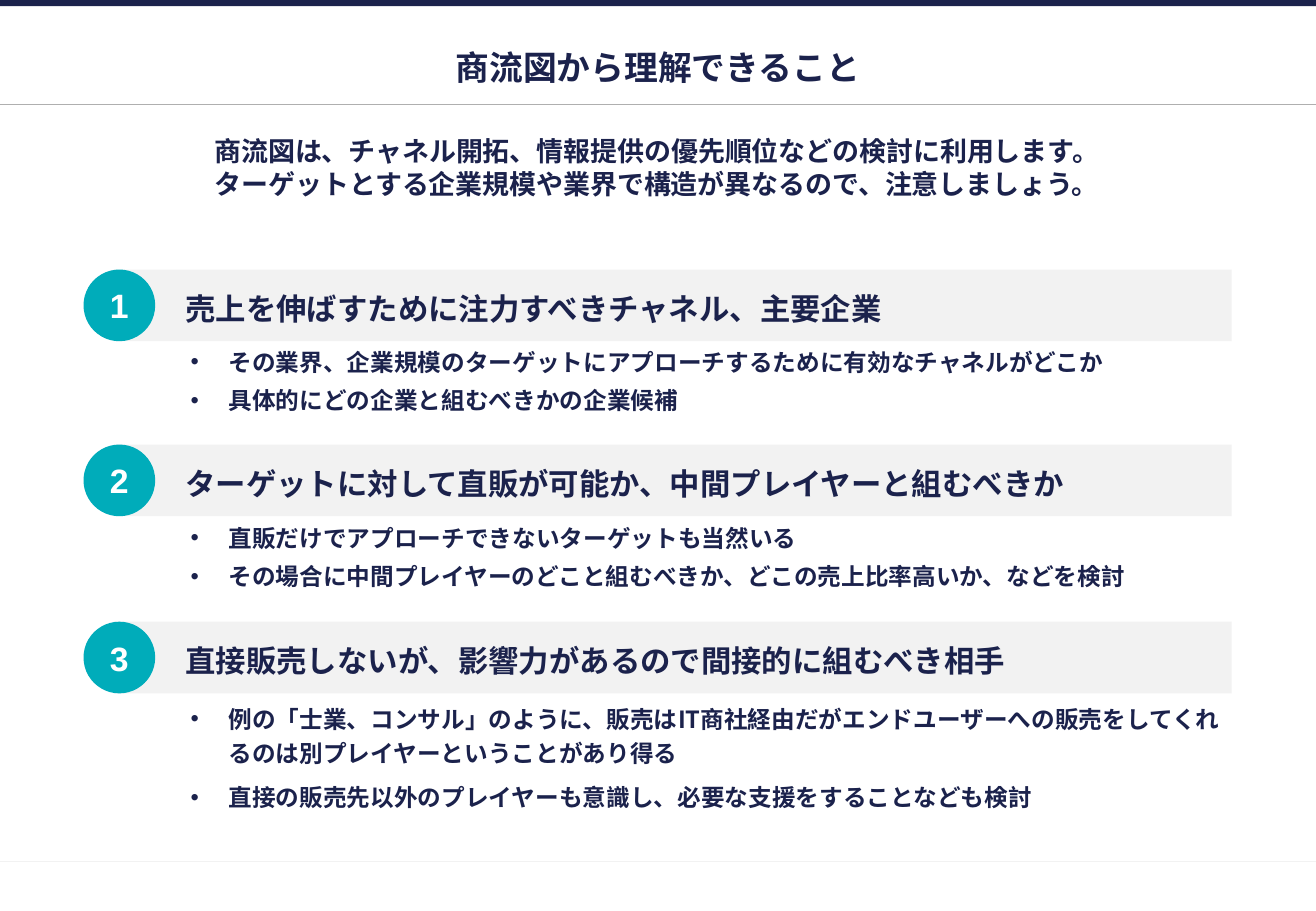
from lxml.etree import SubElement
from pptx import Presentation
from pptx.dml.color import RGBColor
from pptx.enum.shapes import MSO_CONNECTOR as CONNECTOR, MSO_SHAPE as SHAPE
from pptx.enum.text import MSO_ANCHOR as ANCHOR, MSO_AUTO_SIZE as AUTO_SIZE, PP_ALIGN as ALIGN
from pptx.oxml.ns import qn
from pptx.util import Pt

JAPANESE = "Noto Sans CJK JP"
NAVY, TEAL, PALE, GREY, WHITE = "1B224C", "00ACBA", "F2F2F2", "AFAFAF", "FFFFFF"
SLIDE_WIDTH, SLIDE_HEIGHT = 780, 540
LEFT, WIDTH = 49.5, 681
BAR_LEFT, BAR_WIDTH, BAR_HEIGHT = 67.5, 662.5, 42.5
LIST_LEFT, LIST_WIDTH = 110, 620
LIST_INDENT = 22.5

TITLE = "商流図から理解できること"
LEAD = [
    "商流図は、チャネル開拓、情報提供の優先順位などの検討に利用します。",
    "ターゲットとする企業規模や業界で構造が異なるので、注意しましょう。",
]
SECTIONS = [
    (159.75, 203, 57, 1, "売上を伸ばすために注力すべきチャネル、主要企業", [
        "その業界、企業規模のターゲットにアプローチするために有効なチャネルがどこか",
        "具体的にどの企業と組むべきかの企業候補",
    ]),
    (263.5, 307.25, 57, 1, "ターゲットに対して直販が可能か、中間プレイヤーと組むべきか", [
        "直販だけでアプローチできないターゲットも当然いる",
        "その場合に中間プレイヤーのどこと組むべきか、どこの売上比率高いか、などを検討",
    ]),
    (368.5, 411.25, 84, 1.2, "直接販売しないが、影響力があるので間接的に組むべき相手", [
        "例の「士業、コンサル」のように、販売はIT商社経由だがエンドユーザーへの販売をしてくれるのは別プレイヤーということがあり得る",
        "直接の販売先以外のプレイヤーも意識し、必要な支援をすることなども検討",
    ]),
]


def color(value):
    return RGBColor.from_string(value)


def write(shape, lines, size, font=JAPANESE, text_color=NAVY, align=ALIGN.LEFT,
          anchor=ANCHOR.MIDDLE, insets=(7.2, 3.6, 7.2, 3.6)):
    frame = shape.text_frame
    frame.text = "\n".join(lines)
    frame.word_wrap = True
    frame.auto_size = AUTO_SIZE.NONE
    frame.vertical_anchor = anchor
    frame.margin_left, frame.margin_top, frame.margin_right, frame.margin_bottom = map(Pt, insets)
    for paragraph in frame.paragraphs:
        paragraph.alignment = align
        paragraph.space_before = Pt(0)
        for run in paragraph.runs:
            run.font.size = Pt(size)
            run.font.bold = True
            run.font.color.rgb = color(text_color)
            run.font.name = font
            SubElement(run.font._element, qn("a:ea"), typeface=font)


def place(shape, left, top, width, height):
    shape.left, shape.top, shape.width, shape.height = map(Pt, (left, top, width, height))


def add_block(slide, kind, left, top, width, height, fill):
    shape = slide.shapes.add_shape(kind, Pt(left), Pt(top), Pt(width), Pt(height))
    shape.shadow.inherit = False
    shape.fill.solid()
    shape.fill.fore_color.rgb = color(fill)
    shape.line.fill.background()
    return shape


def add_rule(slide, top, line_color):
    rule = slide.shapes.add_connector(CONNECTOR.STRAIGHT, Pt(0), Pt(top), Pt(SLIDE_WIDTH), Pt(top))
    rule.line.color.rgb = color(line_color)
    rule.line.width = Pt(0.75)
    SubElement(rule._element.spPr, qn("a:effectLst"))


def add_bullet(paragraph):
    properties = paragraph._p.get_or_add_pPr()
    properties.set("marL", str(Pt(LIST_INDENT)))
    properties.set("indent", str(-Pt(LIST_INDENT)))
    bullet_color = SubElement(properties, qn("a:buClr"))
    SubElement(bullet_color, qn("a:srgbClr"), val=NAVY)
    SubElement(properties, qn("a:buFont"), typeface="Arial")
    SubElement(properties, qn("a:buChar"), char="•")


def fill_list(placeholder, top, height, spacing, items):
    place(placeholder, LIST_LEFT, top, LIST_WIDTH, height)
    write(placeholder, items, 14, anchor=ANCHOR.TOP, insets=(3, 3, 3, 3))
    paragraphs = placeholder.text_frame.paragraphs
    for paragraph in paragraphs:
        add_bullet(paragraph)
        paragraph.line_spacing = spacing
    for paragraph in paragraphs[1:]:
        paragraph.space_before = Pt(6)


def add_heading(slide, number, top, heading):
    bar = add_block(slide, SHAPE.RECTANGLE, BAR_LEFT, top, BAR_WIDTH, BAR_HEIGHT, PALE)
    write(bar, [heading], 18, insets=(42.5, 7.2, 7.2, 3.6))
    badge = add_block(slide, SHAPE.OVAL, LEFT, top, BAR_HEIGHT, BAR_HEIGHT, TEAL)
    write(badge, [str(number)], 20, "Arial", WHITE, ALIGN.CENTER)


def main():
    presentation = Presentation()
    presentation.slide_width, presentation.slide_height = Pt(SLIDE_WIDTH), Pt(SLIDE_HEIGHT)
    slide = presentation.slides.add_slide(presentation.slide_layouts.get_by_name("Comparison"))
    title, lead, *lists = slide.placeholders

    add_rule(slide, 510.5, PALE)
    add_block(slide, SHAPE.RECTANGLE, 0, 0, SLIDE_WIDTH, 3.75, NAVY)
    add_rule(slide, 62, GREY)

    place(title, LEFT, 24.5, WIDTH, 30)
    write(title, [TITLE], 20, align=ALIGN.CENTER, insets=(3, 3, 3, 3))
    place(lead, 49, 76.25, WIDTH, 64)
    write(lead, LEAD, 16, align=ALIGN.CENTER, anchor=ANCHOR.TOP)

    for number, (placeholder, section) in enumerate(zip(lists, SECTIONS), 1):
        top, list_top, list_height, spacing, heading, items = section
        fill_list(placeholder, list_top, list_height, spacing, items)
        add_heading(slide, number, top, heading)

    presentation.save("out.pptx")


if __name__ == "__main__":
    main()
